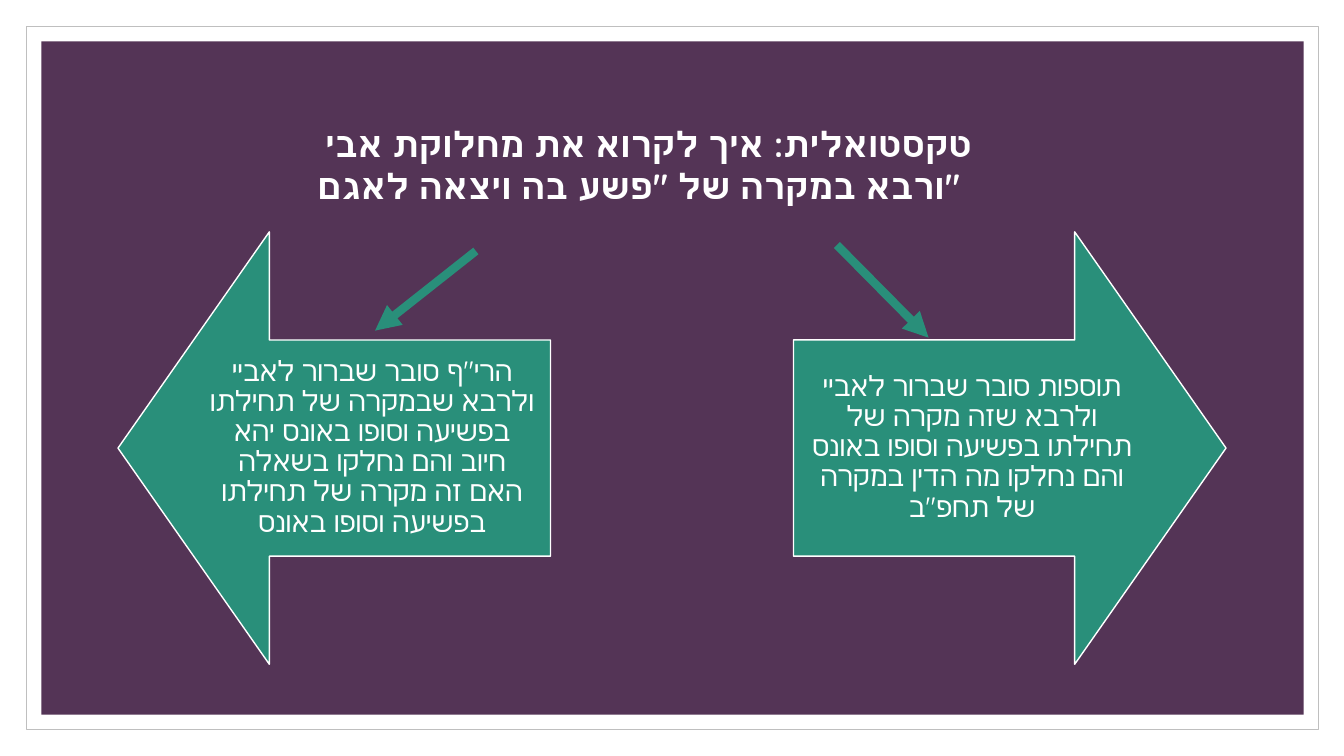
from dataclasses import dataclass

from lxml import etree
from pptx import Presentation
from pptx.dml.color import RGBColor
from pptx.enum.shapes import MSO_CONNECTOR, MSO_SHAPE
from pptx.enum.text import MSO_ANCHOR, MSO_AUTO_SIZE, PP_ALIGN
from pptx.oxml.ns import qn
from pptx.util import Pt

RECT, UP_ARROW = MSO_SHAPE.RECTANGLE, MSO_SHAPE.UP_ARROW
STRAIGHT = MSO_CONNECTOR.STRAIGHT
TOP, MIDDLE = MSO_ANCHOR.TOP, MSO_ANCHOR.MIDDLE
CENTER = PP_ALIGN.CENTER
NO_AUTOFIT = MSO_AUTO_SIZE.NONE
TITLE_ONLY = 5
EMU_PER_PX = 9144  # 100 px to the inch


@dataclass(frozen=True)
class Theme:
    paper: RGBColor = RGBColor(0xFF, 0xFF, 0xFF)
    border: RGBColor = RGBColor(0xBF, 0xBF, 0xBF)
    panel: RGBColor = RGBColor(0x54, 0x34, 0x56)
    accent: RGBColor = RGBColor(0x29, 0x8F, 0x7A)
    font: str = "Quicksand"
    title_size: int = 25
    body_size: int = 20


THEME = Theme()

TITLE = ' טקסטואלית: איך לקרוא את מחלוקת אבי ורבא במקרה של "פשע בה ויצאה לאגם" '
RIF_VIEW = (
    'הרי"ף סובר שברור לאביי ולרבא שבמקרה של תחילתו בפשיעה וסופו באונס יהא '
    'חיוב והם נחלקו בשאלה האם זה מקרה של תחילתו בפשיעה וסופו באונס'
)
TOSAFOT_VIEW = (
    'תוספות סובר שברור לאביי ולרבא שזה מקרה של תחילתו בפשיעה וסופו באונס '
    'והם נחלקו מה הדין במקרה של תחפ"ב'
)


def px(*values):
    return [v * EMU_PER_PX for v in values]


def add_filled(s, kind, box, fill, line=None, width=1):
    sp = s.shapes.add_shape(kind, *px(*box))
    sp.shadow.inherit = False
    sp.fill.solid()
    sp.fill.fore_color.rgb = fill
    if line is None:
        sp.line.fill.background()
    else:
        sp.line.color.rgb = line
        sp.line.width = Pt(width)
    return sp


def write_text(sp, text, size, anchor, spacing, bold=False):
    tf = sp.text_frame
    tf.text = text
    tf.word_wrap = True
    tf.auto_size = NO_AUTOFIT
    tf.vertical_anchor = anchor
    p = tf.paragraphs[0]
    p.alignment = CENTER
    p.line_spacing = spacing
    r = p.runs[0]
    r.font.name = THEME.font
    r.font.size = Pt(size)
    r.font.bold = bold
    r.font.color.rgb = THEME.paper
    # Hebrew takes its typeface from the complex-script slot
    etree.SubElement(r.font._element, qn("a:cs"), typeface=THEME.font)
    return tf


def add_frame(s, box):
    """White page with a thin border around the purple panel."""
    x, y, w, h = box
    inset = 15
    add_filled(s, RECT, box, THEME.paper, THEME.border, 0.5)
    panel = (x + inset, y + inset, w - 2 * inset, h - 2 * inset)
    add_filled(s, RECT, panel, THEME.panel)


def add_title(s, box):
    title = s.shapes.title
    title.left, title.top, title.width, title.height = px(*box)
    write_text(title, TITLE, THEME.title_size, TOP, 1.0, bold=True)
    # Bring the placeholder in front of the frame
    title.element.getparent().append(title.element)


def add_opinion(s, box, text, points_left):
    """Block arrow with its text on the shaft side."""
    x, y, w, h = box
    arrow = add_filled(s, UP_ARROW, box, THEME.accent, THEME.paper)
    arrow.adjustments[0], arrow.adjustments[1] = 0.5, 0.35
    arrow.rotation = 270 if points_left else 90

    head = 75
    text_x = x + head if points_left else x
    label = s.shapes.add_textbox(*px(text_x, y + h // 4, w - head, h // 2))
    tf = write_text(label, text, THEME.body_size, MIDDLE, 0.9)
    tf.margin_left = tf.margin_right = tf.margin_top = tf.margin_bottom = px(16)[0]
    tf.paragraphs[0]._p.get_or_add_pPr().set("rtl", "1")


def add_pointer(s, start, end):
    line = s.shapes.add_connector(STRAIGHT, *px(*start, *end))
    line.line.color.rgb = THEME.accent
    line.line.width = Pt(6)
    etree.SubElement(line.line._get_or_add_ln(), qn("a:tailEnd"), type="triangle")
    etree.SubElement(line.element.spPr, qn("a:effectLst"))


def main():
    prs = Presentation()
    prs.slide_width, prs.slide_height = px(1333, 750)
    s = prs.slides.add_slide(prs.slide_layouts[TITLE_ONLY])

    add_frame(s, (26, 26, 1282, 698))
    # Two opposing opinions
    add_opinion(s, (117, 230, 429, 429), RIF_VIEW, points_left=True)
    add_opinion(s, (787, 230, 429, 429), TOSAFOT_VIEW, points_left=False)
    # Question and the pointers leading from it
    add_title(s, (299, 117, 679, 136))
    add_pointer(s, (830, 243), (921, 335))
    add_pointer(s, (472, 249), (372, 328))

    prs.save("out.pptx")


if __name__ == "__main__":
    main()
